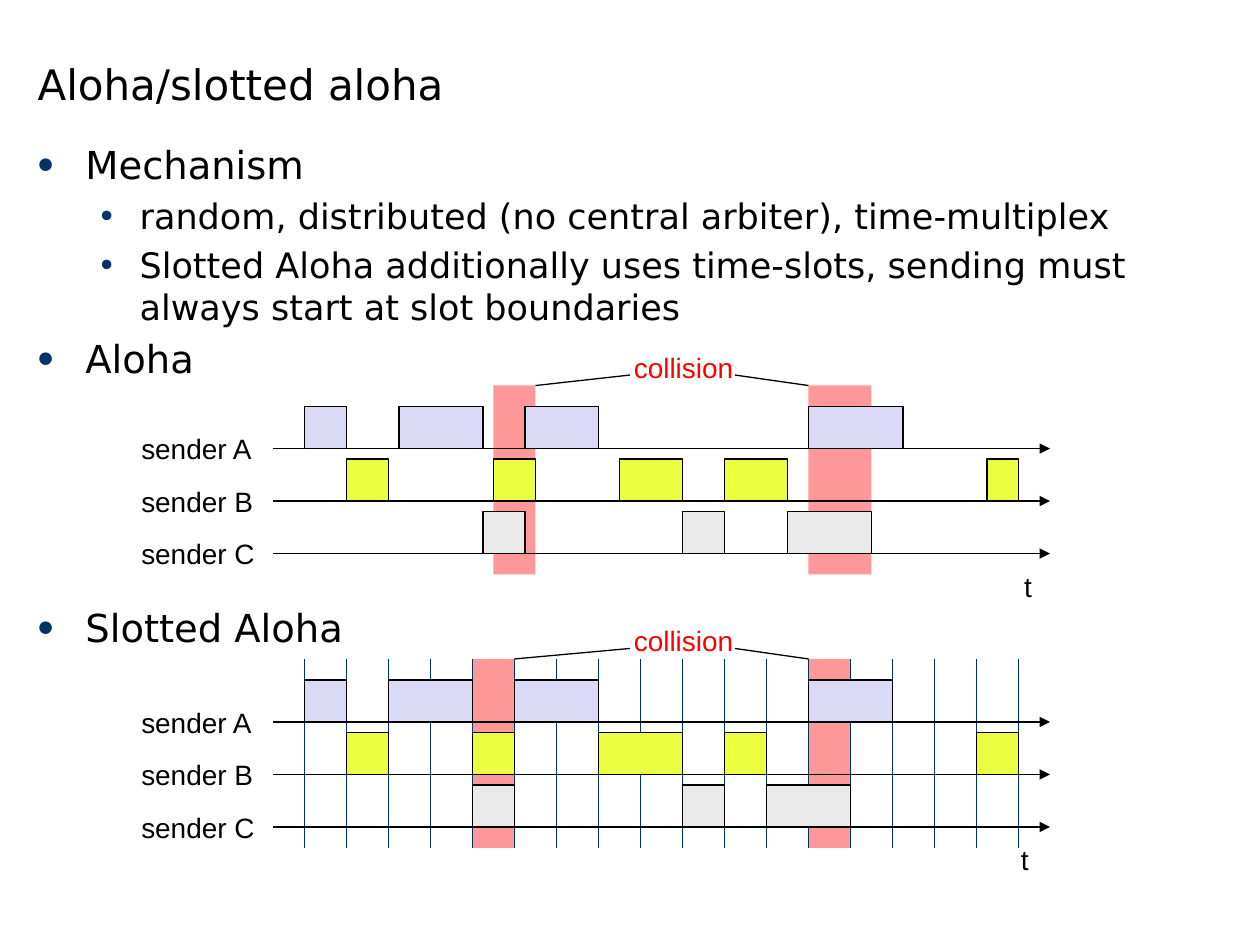
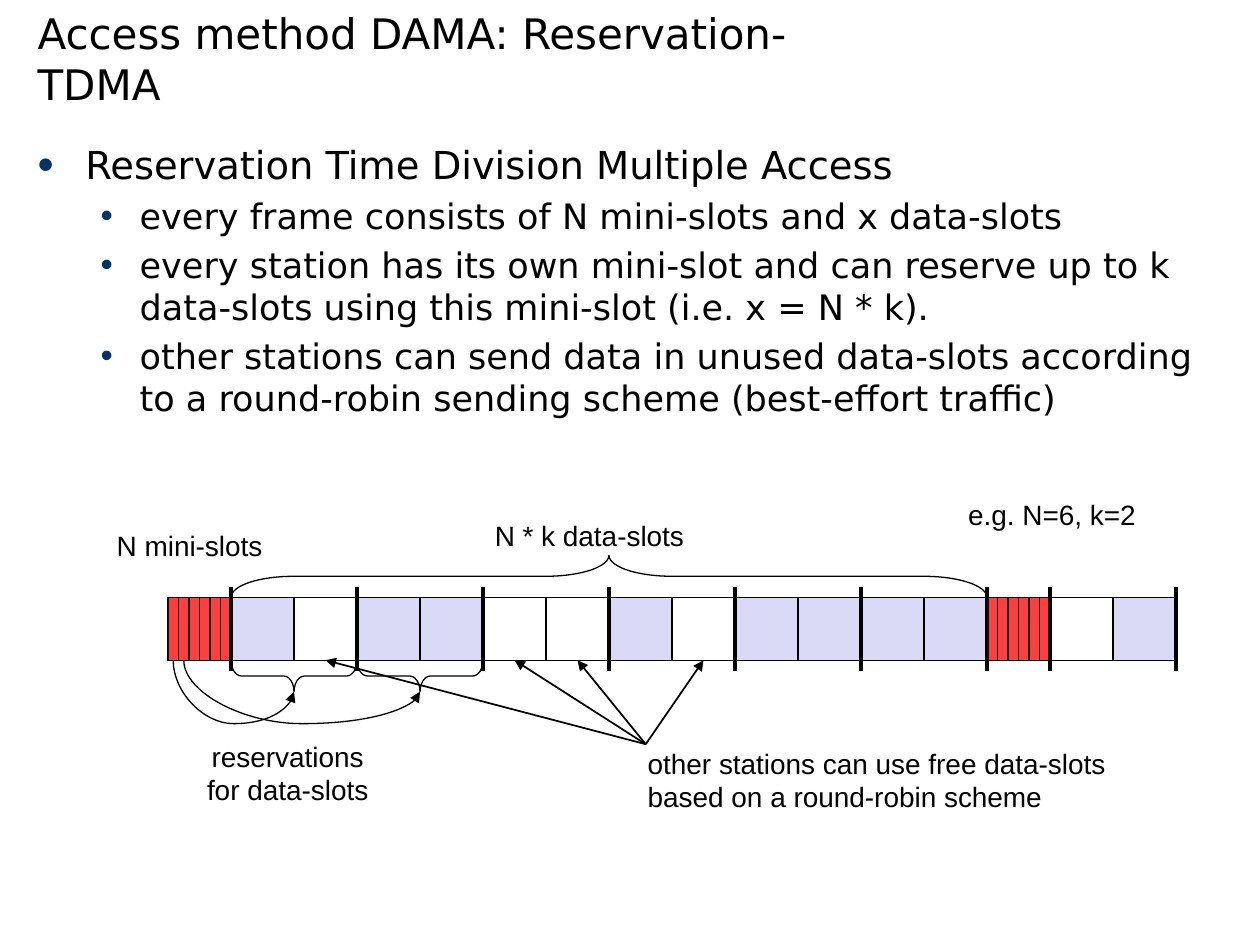
from dataclasses import dataclass

from lxml.etree import SubElement
from pptx import Presentation
from pptx.dml.color import RGBColor
from pptx.enum.shapes import MSO_CONNECTOR, MSO_SHAPE
from pptx.enum.text import MSO_ANCHOR, PP_ALIGN
from pptx.oxml.ns import qn
from pptx.util import Inches, Pt

COLORS = {
    "text": "000000",
    "accent": "003366",
    "alert": "FF0000",
    "collision": "FF9999",
    "sender A": "DADAF6",
    "sender B": "ECFE40",
    "sender C": "EAEAEA",
    "reserved": "DADAF6",
    "free": "FFFFFF",
    "mini": "FF3F3F",
}
HEADING_FONT = "DejaVu Sans"
LABEL_FONT = "Arial"
UNIT = 1 / 12
SLOT = 4
DATA_SLOT = 6
MINI_SLOTS = 6
LEVELS = [
    {"size": 22, "margin": 0.38, "hang": 0.38, "bullet": 120},
    {"size": 20, "margin": 0.81, "hang": 0.31, "bullet": 100},
]
SENDER_BASELINES = {"sender A": 6, "sender B": 11, "sender C": 16}

ALOHA_BLOCKS = {
    "sender A": [(29, 4), (38, 8), (50, 7), (77, 9)],
    "sender B": [(33, 4), (47, 4), (59, 6), (69, 6), (94, 3)],
    "sender C": [(46, 4), (65, 4), (75, 8)],
}
SLOTTED_BLOCKS = {
    "sender A": [(29, 4), (37, 8), (49, 8), (77, 8)],
    "sender B": [(33, 4), (45, 4), (57, 8), (69, 4), (93, 4)],
    "sender C": [(45, 4), (65, 4), (73, 8)],
}


@dataclass
class Diagram:
    slide: object
    top: float

    def x(self, column):
        return Inches(column * UNIT)

    def y(self, row):
        return Inches(self.top + row * UNIT)


def rgb(name):
    return RGBColor.from_string(COLORS[name])


def style_paragraph(paragraph, size, font, color="text"):
    for run in paragraph.runs:
        run.font.size = Pt(size)
        run.font.name = font
        run.font.color.rgb = rgb(color)


def add_title(slide, title):
    box = slide.shapes.add_textbox(Inches(0.2), 0, Inches(6.61), Inches(0.91))
    frame = box.text_frame
    frame.word_wrap = True
    frame.vertical_anchor = MSO_ANCHOR.BOTTOM
    frame.text = title
    style_paragraph(frame.paragraphs[0], 24, HEADING_FONT)


def add_bullet(paragraph, level):
    properties = paragraph._p.get_or_add_pPr()
    properties.set("marL", str(Inches(level["margin"])))
    properties.set("indent", str(-Inches(level["hang"])))
    color = SubElement(properties, qn("a:buClr"))
    SubElement(color, qn("a:srgbClr"), val=COLORS["accent"])
    SubElement(properties, qn("a:buSzPct"), val=str(level["bullet"] * 1000))
    SubElement(properties, qn("a:buFont"), typeface=LABEL_FONT)
    SubElement(properties, qn("a:buChar"), char="•")


def add_body(slide, points, last_gap=None):
    box = slide.shapes.add_textbox(Inches(0.2), Inches(1.07), Inches(9.61), Inches(5.85))
    frame = box.text_frame
    frame.word_wrap = True
    frame.text = "\n".join(text for _, text in points)
    for index, (depth, _) in enumerate(points):
        paragraph = frame.paragraphs[index]
        level = LEVELS[depth]
        paragraph.level = depth
        add_bullet(paragraph, level)
        if index:
            paragraph.space_before = Pt(0.2 * level["size"])
        style_paragraph(paragraph, level["size"], HEADING_FONT)
    if last_gap:
        frame.paragraphs[-1].space_before = Pt(last_gap)


def add_label(diagram, text, column, row, width, color="text", align=PP_ALIGN.LEFT):
    lines = text.count("\n") + 1
    height = 0.1 + 0.26 * lines
    box = diagram.slide.shapes.add_textbox(
        diagram.x(column) - Inches(width / 2), diagram.y(row) - Inches(height / 2),
        Inches(width), Inches(height))
    frame = box.text_frame
    frame.word_wrap = False
    frame.vertical_anchor = MSO_ANCHOR.MIDDLE
    frame.text = text
    for paragraph in frame.paragraphs:
        paragraph.alignment = align
        style_paragraph(paragraph, 16, LABEL_FONT, color)


def add_block(diagram, column, row, columns, rows, color, outlined=True):
    block = diagram.slide.shapes.add_shape(
        MSO_SHAPE.RECTANGLE, diagram.x(column), diagram.y(row),
        Inches(columns * UNIT), Inches(rows * UNIT))
    block.shadow.inherit = False
    block.fill.solid()
    block.fill.fore_color.rgb = rgb(color)
    if outlined:
        block.line.color.rgb = rgb("text")
        block.line.width = Pt(0.75)
    else:
        block.line.fill.background()
    return block


def add_line(diagram, start, end, color="text", width=0.75, arrow=False,
             kind=MSO_CONNECTOR.STRAIGHT):
    line = diagram.slide.shapes.add_connector(
        kind, diagram.x(start[0]), diagram.y(start[1]),
        diagram.x(end[0]), diagram.y(end[1]))
    line.line.color.rgb = rgb(color)
    line.line.width = Pt(width)
    if arrow:
        SubElement(line.line._get_or_add_ln(), qn("a:tailEnd"), type="triangle")
    SubElement(line._element.spPr, qn("a:effectLst"))
    return line


def add_brace(diagram, column, row, span, depth, curl, rotation):
    brace = diagram.slide.shapes.add_shape(
        MSO_SHAPE.RIGHT_BRACE, diagram.x(column - depth / 2), diagram.y(row - span / 2),
        Inches(depth * UNIT), Inches(span * UNIT))
    brace.rotation = rotation
    brace.adjustments[0] = curl
    brace.shadow.inherit = False
    brace.fill.background()
    brace.line.color.rgb = rgb("text")
    brace.line.width = Pt(0.75)


def add_reservation_curve(diagram, start, end):
    column, row = (start[0] + end[0]) / 2, (start[1] + end[1]) / 2
    half_drop, half_span = (end[1] - start[1]) / 2, (end[0] - start[0]) / 2
    curve = add_line(diagram, (column - half_drop, row - half_span),
                     (column + half_drop, row + half_span),
                     arrow=True, kind=MSO_CONNECTOR.CURVE)
    properties = curve._element.spPr
    transform = properties.find(qn("a:xfrm"))
    transform.set("rot", str(270 * 60000))
    transform.set("flipH", "1")
    geometry = properties.find(qn("a:prstGeom"))
    guides = geometry.find(qn("a:avLst"))
    if guides is None:
        guides = SubElement(geometry, qn("a:avLst"))
    SubElement(guides, qn("a:gd"), name="adj1", fmla="val 201400")


def add_timeline(diagram, blocks, collisions, time_column, slotted=False):
    for column, columns in collisions:
        add_block(diagram, column, 0, columns, 18, "collision", outlined=False)
    if slotted:
        for column in range(29, 98, SLOT):
            add_line(diagram, (column, 0), (column, 18), "accent")
    for sender, baseline in SENDER_BASELINES.items():
        add_line(diagram, (26, baseline), (100, baseline), arrow=True)
        add_label(diagram, sender, 18.88, baseline, 1.1)
        for column, columns in blocks[sender]:
            add_block(diagram, column, baseline - 4, columns, 4, sender)
    (first, first_columns), (second, _) = collisions
    add_label(diagram, "collision", 65.1, -1.75, 0.99, "alert", PP_ALIGN.CENTER)
    add_line(diagram, (first + first_columns, 0), (60, -1))
    add_line(diagram, (second, 0), (70, -1))
    add_label(diagram, "t", time_column, 19.1, 0.26, align=PP_ALIGN.CENTER)


def add_mini_slots(diagram, start):
    for column in range(start, start + MINI_SLOTS):
        add_block(diagram, column, 0, 1, 6, "mini")


def add_data_slots(diagram, start, states):
    return [
        add_block(diagram, start + index * DATA_SLOT, 0, DATA_SLOT, 6, state)
        for index, state in enumerate(states)
    ]


def add_frame_diagram(diagram):
    frame_start, next_frame = 16, 94
    data_start = frame_start + MINI_SLOTS
    states = ["free" if index in (1, 4, 5, 7) else "reserved" for index in range(12)]
    add_mini_slots(diagram, frame_start)
    slots = add_data_slots(diagram, data_start, states)
    add_mini_slots(diagram, next_frame)
    add_data_slots(diagram, next_frame + MINI_SLOTS, ["free", "reserved"])
    for column in [*range(data_start, next_frame + 1, 2 * DATA_SLOT), 100, 112]:
        add_line(diagram, (column, -1), (column, 7), width=2.25)

    for index, slot in enumerate(slots):
        if states[index] == "free":
            center = data_start + (index + 0.5) * DATA_SLOT
            arrow = add_line(diagram, (61.5, 14), (center, 6), width=1, arrow=True)
            arrow.end_connect(slot, 2)

    for station in range(2):
        center = data_start + (2 * station + 1) * DATA_SLOT
        add_brace(diagram, center, 7.5, 2 * DATA_SLOT, 3, 0.33, 90)
        add_reservation_curve(diagram, (frame_start + station + 0.5, 6), (center, 9))
    add_brace(diagram, (data_start + next_frame) / 2, -2, 12 * DATA_SLOT, 4, 1.5, 270)

    add_label(diagram, "N mini-slots", 18.1, -4.9, 1.36)
    add_label(diagram, "N * k data-slots", 56.2, -5.9, 1.71)
    add_label(diagram, "e.g. N=6, k=2", 100.2, -7.9, 1.54, align=PP_ALIGN.CENTER)
    add_label(diagram, "reservations\nfor data-slots", 27.4, 16.7, 1.48,
              align=PP_ALIGN.CENTER)
    add_label(diagram, "other stations can use free data-slots\n"
                       "based on a round-robin scheme", 83.6, 17.4, 3.85)


def add_slide(deck, title, points, last_gap=None):
    slide = deck.slides.add_slide(deck.slide_layouts[6])
    add_title(slide, title)
    add_body(slide, points, last_gap)
    return slide


def main():
    deck = Presentation()
    deck.slide_width, deck.slide_height = Inches(10), Inches(7.5)

    aloha = add_slide(deck, "Aloha/slotted aloha", [
        (0, "Mechanism"),
        (1, "random, distributed (no central arbiter), time-multiplex"),
        (1, "Slotted Aloha additionally uses time-slots, sending must always "
            "start at slot boundaries"),
        (0, "Aloha"),
        (0, "Slotted Aloha"),
    ], last_gap=127.6)
    add_timeline(Diagram(aloha, 3.06), ALOHA_BLOCKS, [(47, 4), (77, 6)], 97.9)
    add_timeline(Diagram(aloha, 5.23), SLOTTED_BLOCKS, [(45, 4), (77, 4)], 97.6,
                 slotted=True)

    reservation = add_slide(deck, "Access method DAMA: Reservation-TDMA", [
        (0, "Reservation Time Division Multiple Access"),
        (1, "every frame consists of N mini-slots and x data-slots"),
        (1, "every station has its own mini-slot and can reserve up to k data-slots "
            "using this mini-slot (i.e. x = N * k)."),
        (1, "other stations can send data in unused data-slots according to a "
            "round-robin sending scheme (best-effort traffic)"),
    ])
    add_frame_diagram(Diagram(reservation, 4.74))
    deck.save("out.pptx")


if __name__ == "__main__":
    main()
